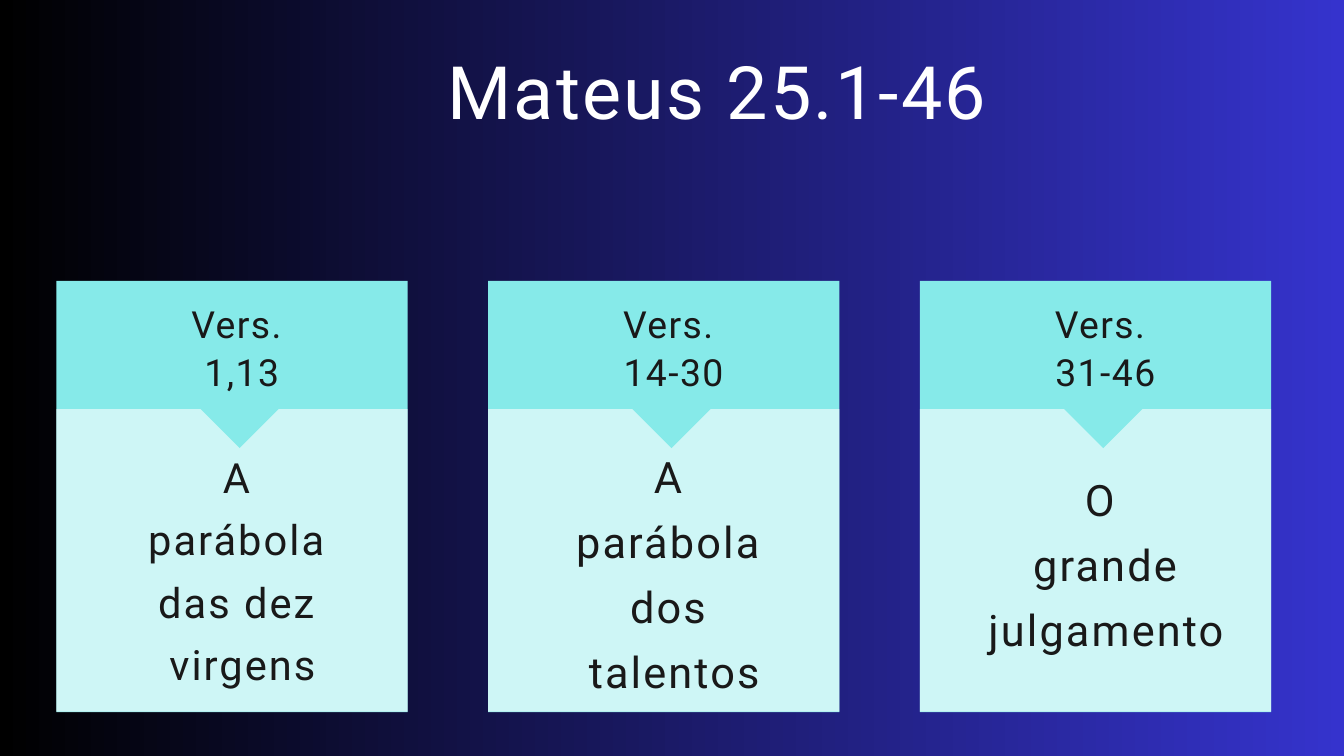
"""Build the Mateus 25.1-46 slide: a title above three passage cards."""
from lxml import etree
from pptx import Presentation
from pptx import util as u
from pptx.dml.color import RGBColor
from pptx.enum import shapes, text
from pptx.oxml.ns import qn

COLORS = {"start": "000000", "end": "3533CD", "header": "86EAE9",
          "veil": "FFFFFF", "title": "FFFFFF", "ink": "191919"}
FONT = "Roboto"
TITLE = "Mateus 25.1-46"
PASSAGES = [
    {"verses": ["Vers. ", "1,13"],
     "theme": ["A ", "parábola ", "das dez ", "virgens"],
     "top": 16.61, "height": 12.14, "style": (44.6, 66.8, 2.2)},
    {"verses": ["Vers. ", "14-30"],
     "theme": ["A ", "parábola ", "dos ", "talentos"],
     "top": 16.54, "height": 9.65, "style": (46.4, 69.6, 2.3)},
    {"verses": ["Vers. ", "31-46"],
     "theme": ["O ", "grande julgamento"],
     "top": 17.4, "height": 7.21, "style": (46.4, 69.6, 2.3)},
]
TITLE_STYLE = (78.9, 103.4, 2.4)
VERSES_STYLE = (40, 51.6, 1.6)
CARD_LEFT, CARD_PITCH, CARD_WIDTH = 2.13, 16.32, 13.28
CARD_TOP, CARD_HEIGHT = 10.62, 16.3
VEIL_TOP, VEIL_HEIGHT, VEIL_OPACITY = 15.47, 11.43, 60
POINTER = [(8.81, 15.06), (6.93, 16.94), (4.98, 14.99)]


def paint(shape, color, opacity=100):
    shape.shadow.inherit = False
    shape.fill.solid()
    shape.fill.fore_color.rgb = RGBColor.from_string(COLORS[color])
    shape.line.fill.background()
    if opacity < 100:
        tint = shape._element.spPr.find(qn("a:solidFill"))[0]
        etree.SubElement(tint, qn("a:alpha")).set("val", str(opacity * 1000))


def add_panel(slide, box, color, opacity=100):
    panel = slide.shapes.add_shape(shapes.MSO_SHAPE.RECTANGLE, *map(u.Cm, box))
    paint(panel, color, opacity)


def add_lines(slide, box, lines, style, color):
    size, leading, tracking = style
    frame = slide.shapes.add_textbox(*map(u.Cm, box)).text_frame
    frame.word_wrap = True
    frame.auto_size = text.MSO_AUTO_SIZE.SHAPE_TO_FIT_TEXT
    frame.margin_left = frame.margin_right = 0
    frame.margin_top = frame.margin_bottom = 0
    frame.text = "\n".join(lines)
    for paragraph in frame.paragraphs:
        paragraph.alignment = text.PP_ALIGN.CENTER
        paragraph.line_spacing = u.Pt(leading)
        font = paragraph.font
        font.name, font.size = FONT, u.Pt(size)
        font.color.rgb = RGBColor.from_string(COLORS[color])
        font._rPr.set("spc", str(round(tracking * 100)))


def add_pointer(slide, left):
    corners = [(u.Cm(left + x), u.Cm(y)) for x, y in POINTER]
    outline = slide.shapes.build_freeform(*corners[0])
    outline.add_line_segments(corners[1:], close=True)
    paint(outline.convert_to_shape(), "header")


def add_card(slide, left, passage):
    add_panel(slide, (left, CARD_TOP, CARD_WIDTH, CARD_HEIGHT), "header")
    add_panel(slide, (left, VEIL_TOP, CARD_WIDTH, VEIL_HEIGHT), "veil", VEIL_OPACITY)
    add_lines(slide, (left - 1.51, 11.25, 17.04, 3.58),
              passage["verses"], VERSES_STYLE, "ink")
    add_lines(slide, (left + 0.73, passage["top"], 12.62, passage["height"]),
              passage["theme"], passage["style"], "ink")
    add_pointer(slide, left)


def main():
    deck = Presentation()
    deck.slide_width, deck.slide_height = u.Cm(50.8), u.Cm(28.58)
    slide = deck.slides.add_slide(deck.slide_layouts[6])
    backdrop = slide.background.fill
    backdrop.gradient()
    backdrop.gradient_angle = 0
    for stop, position, color in zip(backdrop.gradient_stops, (0, 1), ("start", "end")):
        stop.position = position
        stop.color.rgb = RGBColor.from_string(COLORS[color])
    add_lines(slide, (8.79, 1.42, 36.65, 7.06), [TITLE], TITLE_STYLE, "title")
    for index, passage in enumerate(PASSAGES):
        add_card(slide, CARD_LEFT + index * CARD_PITCH, passage)
    deck.save("out.pptx")


if __name__ == "__main__":
    main()
